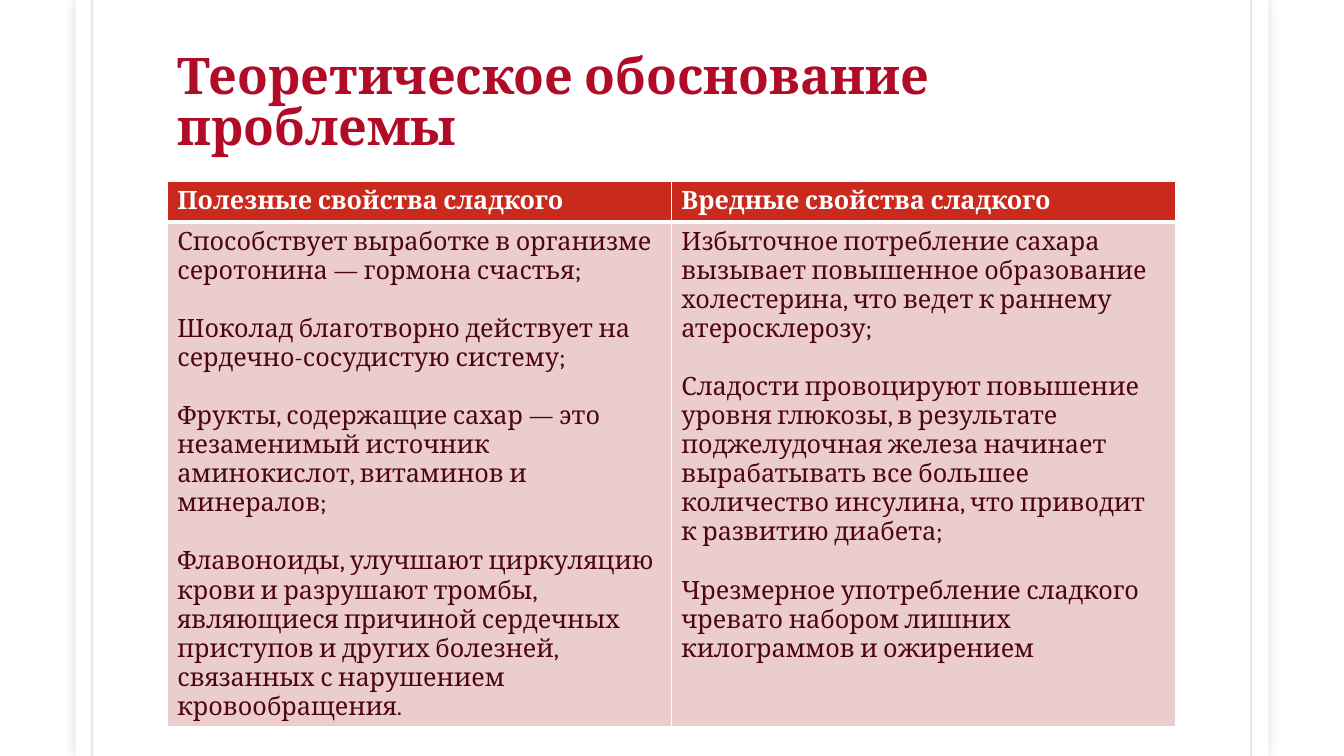
from dataclasses import dataclass

from lxml import etree
from pptx import Presentation
from pptx.dml.color import RGBColor
from pptx.enum.shapes import MSO_CONNECTOR, MSO_SHAPE
from pptx.enum.text import MSO_ANCHOR, PP_ALIGN
from pptx.oxml import parse_xml
from pptx.oxml.ns import nsdecls, qn
from pptx.util import Pt

RECTANGLE = MSO_SHAPE.RECTANGLE
STRAIGHT = MSO_CONNECTOR.STRAIGHT
BOTTOM = MSO_ANCHOR.BOTTOM
LEFT = PP_ALIGN.LEFT

FONT = "Cambria"
WHITE = "FFFFFF"
PAGE_WIDTH, PAGE_HEIGHT = 960, 540
CONTENT_LEFT, CONTENT_WIDTH = 119.5, 720
TABLE_TOP, HEADER_HEIGHT, BODY_HEIGHT = 129.6, 29.2, 360
SHEET_LEFT, SHEET_WIDTH = 54, 852
RULE_POSITIONS = (65.75, 893.75)
TEXT_SIZE = 18
PARAGRAPH_GAP = 20.75


@dataclass
class RowStyle:
    fill: str
    color: str
    bold: bool
    top: float
    bottom: float


@dataclass
class Column:
    heading: str
    points: list[str]


HEADER_STYLE = RowStyle("CA2A1E", WHITE, True, top=1, bottom=3)
BODY_STYLE = RowStyle("ECCDCD", "4D0511", False, top=3, bottom=1)

COLUMNS = [
    Column("Полезные свойства сладкого", [
        "Способствует выработке в организме серотонина — гормона счастья;",
        "Шоколад благотворно действует на сердечно-сосудистую систему;",
        "Фрукты, содержащие сахар — это незаменимый источник аминокислот, "
        "витаминов и минералов;",
        "Флавоноиды, улучшают циркуляцию крови и разрушают тромбы, являющиеся "
        "причиной сердечных приступов и других болезней, связанных с "
        "нарушением кровообращения.",
    ]),
    Column("Вредные свойства сладкого", [
        "Избыточное потребление сахара вызывает повышенное образование "
        "холестерина, что ведет к раннему атеросклерозу;",
        "Сладости провоцируют повышение уровня глюкозы, в результате "
        "поджелудочная железа начинает вырабатывать все большее количество "
        "инсулина, что приводит к развитию диабета;",
        "Чрезмерное употребление сладкого чревато набором лишних килограммов "
        "и ожирением",
    ]),
]


def rgb(value: str) -> RGBColor:
    return RGBColor.from_string(value)


def format_paragraph(para, size: float, color: str, bold: bool) -> None:
    para.alignment = LEFT
    para.font.name = FONT
    para.font.size = Pt(size)
    para.font.bold = bold
    para.font.color.rgb = rgb(color)


def draw_sheet(page) -> None:
    sheet = page.shapes.add_shape(
        RECTANGLE, Pt(SHEET_LEFT), 0, Pt(SHEET_WIDTH), Pt(PAGE_HEIGHT))
    sheet.fill.solid()
    sheet.fill.fore_color.rgb = rgb(WHITE)
    sheet.line.fill.background()
    sheet.shadow.inherit = False
    effects = sheet._element.spPr.find(qn("a:effectLst"))
    effects.append(parse_xml(
        f'<a:outerShdw {nsdecls("a")} blurRad="{Pt(7)}" dist="0" dir="0" '
        'algn="ctr" rotWithShape="0"><a:srgbClr val="65150F">'
        '<a:alpha val="15000"/></a:srgbClr></a:outerShdw>'))


def draw_rule(page, x: float) -> None:
    """Draw a faint vertical line over the full page height."""
    rule = page.shapes.add_connector(STRAIGHT, Pt(x), 0, Pt(x), Pt(PAGE_HEIGHT))
    rule.line.width = Pt(1.5)
    rule.line.color.rgb = rgb("79540B")
    properties = rule._element.spPr
    color = properties.find(".//" + qn("a:srgbClr"))
    etree.SubElement(color, qn("a:alpha"), val="15000")
    etree.SubElement(properties, qn("a:effectLst"))


def write_title(page) -> None:
    title = page.shapes.title
    page.shapes._spTree.append(title._element)  # in front of the sheet
    title.left, title.top = Pt(CONTENT_LEFT), Pt(25.2)
    title.width, title.height = Pt(CONTENT_WIDTH), Pt(90)
    frame = title.text_frame
    frame.text = "Теоретическое обоснование проблемы"
    frame.word_wrap = True
    frame.vertical_anchor = BOTTOM
    para = frame.paragraphs[0]
    para.line_spacing = 0.85
    format_paragraph(para, 36, "B10C27", True)


def set_borders(cell, style: RowStyle) -> None:
    properties = cell._tc.get_or_add_tcPr()
    widths = {"lnL": 1, "lnR": 1, "lnT": style.top, "lnB": style.bottom}
    for index, (side, width) in enumerate(widths.items()):
        properties.insert(index, parse_xml(
            f'<a:{side} {nsdecls("a")} w="{Pt(width)}"><a:solidFill>'
            f'<a:srgbClr val="{WHITE}"/></a:solidFill></a:{side}>'))


def fill_cell(cell, texts: list[str], style: RowStyle) -> None:
    cell.fill.solid()
    cell.fill.fore_color.rgb = rgb(style.fill)
    set_borders(cell, style)
    frame = cell.text_frame
    frame.text = "\n".join(texts)
    for index, para in enumerate(frame.paragraphs):
        if index:
            para.space_before = Pt(PARAGRAPH_GAP)
        format_paragraph(para, TEXT_SIZE, style.color, style.bold)


def draw_table(page) -> None:
    table = page.shapes.add_table(
        2, len(COLUMNS), Pt(CONTENT_LEFT), Pt(TABLE_TOP),
        Pt(CONTENT_WIDTH), Pt(HEADER_HEIGHT + BODY_HEIGHT)).table
    table.rows[0].height = Pt(HEADER_HEIGHT)
    table.rows[1].height = Pt(BODY_HEIGHT)
    for index, column in enumerate(COLUMNS):
        fill_cell(table.cell(0, index), [column.heading], HEADER_STYLE)
        fill_cell(table.cell(1, index), column.points, BODY_STYLE)


def main() -> None:
    deck = Presentation()
    deck.slide_width, deck.slide_height = Pt(PAGE_WIDTH), Pt(PAGE_HEIGHT)
    page = deck.slides.add_slide(deck.slide_layouts.get_by_name("Title Only"))
    draw_sheet(page)
    for x in RULE_POSITIONS:
        draw_rule(page, x)
    write_title(page)
    draw_table(page)
    deck.save("out.pptx")


if __name__ == "__main__":
    main()
